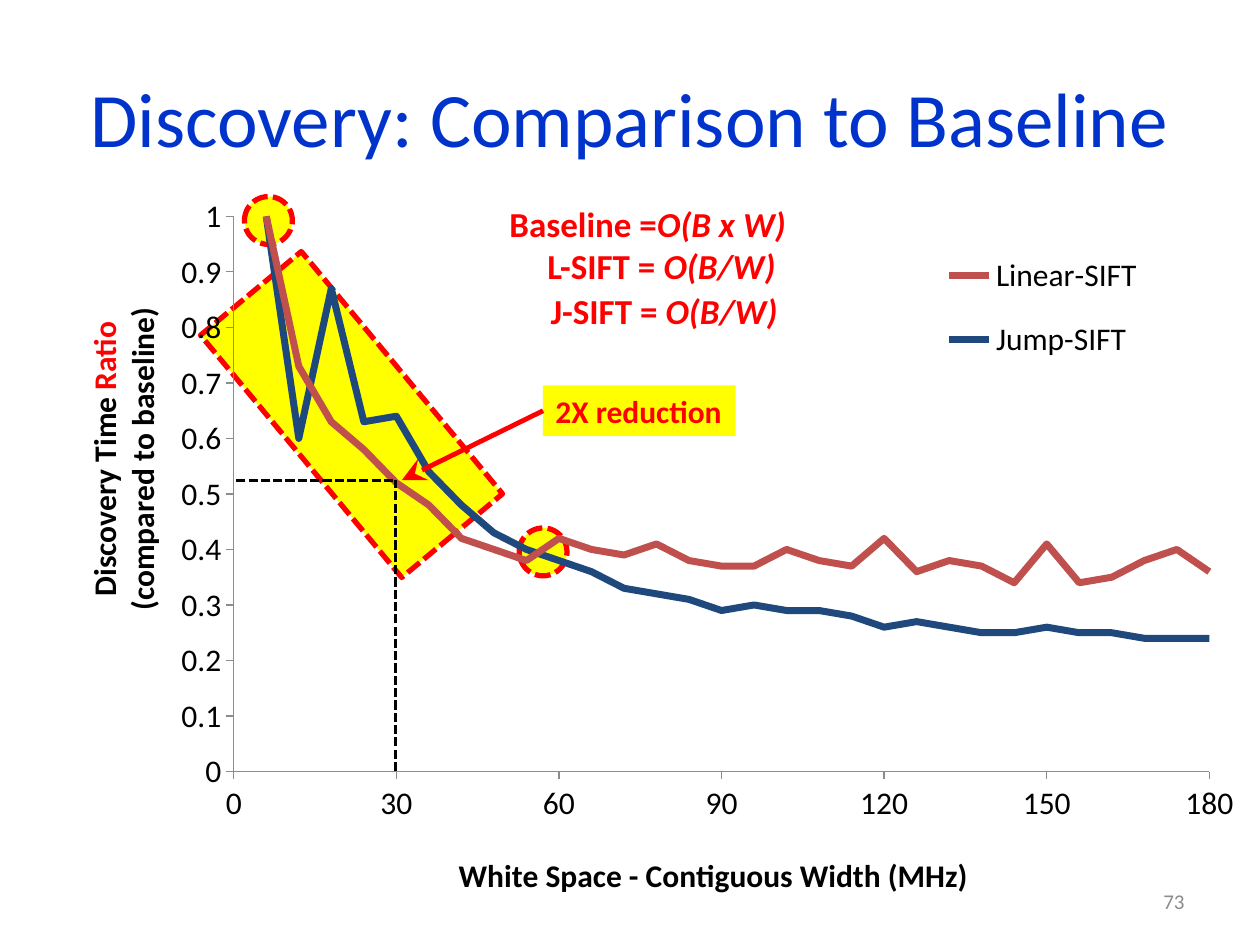
"""Build the slide comparing SIFT discovery times with the baseline."""
from lxml.etree import SubElement
from pptx import Presentation
from pptx.chart.data import XyChartData
from pptx.dml.color import RGBColor
from pptx.enum.chart import XL_CHART_TYPE as Chart, XL_LEGEND_POSITION as LegendPos
from pptx.enum.chart import XL_MARKER_STYLE as Marker, XL_TICK_MARK as Tick
from pptx.enum.dml import MSO_LINE as Dash
from pptx.enum.shapes import MSO_CONNECTOR as Link, MSO_SHAPE as Shape
from pptx.enum.text import MSO_ANCHOR as Anchor, PP_ALIGN as Align
from pptx.oxml import parse_xml
from pptx.oxml.ns import nsdecls, qn
from pptx.util import Inches, Pt

BLUE = RGBColor(0x00, 0x33, 0xCC)
RED = RGBColor(0xFF, 0x00, 0x00)
YELLOW = RGBColor(0xFF, 0xFF, 0x00)
BLACK = RGBColor(0x00, 0x00, 0x00)
GRAY = RGBColor(0x8C, 0x8C, 0x8C)
BRICK = RGBColor(0xC0, 0x50, 0x4D)
NAVY = RGBColor(0x1F, 0x49, 0x7D)


def add_run(paragraph, text, color, **formats):
    run = paragraph.add_run()
    run.text = text
    run.font.color.rgb = color
    for key, value in ({"name": "Calibri"} | formats).items():
        setattr(run.font, key, value)


def set_layout(element, index, **fractions):
    for old in element.findall(qn("c:layout")):
        element.remove(old)
    layout = parse_xml(f"<c:layout {nsdecls('c')}><c:manualLayout/></c:layout>")
    for tag, value in fractions.items():
        SubElement(layout[0], qn(f"c:{tag}")).set("val", str(value))
    element.insert(index, layout)


deck = Presentation()
deck.slide_width, deck.slide_height = Inches(10), Inches(7.5)
shapes = deck.slides.add_slide(deck.slide_layouts[6]).shapes

for preset, left, top, width, height, angle in (
    (Shape.RECTANGLE, 2.27, 2.04, 1.04, 2.5, 320.3),
    (Shape.OVAL, 1.94, 1.56, 0.38, 0.38, 0),
    (Shape.OVAL, 4.12, 4.19, 0.38, 0.38, 0),
):
    highlight = shapes.add_shape(
        preset, Inches(left), Inches(top), Inches(width), Inches(height))
    highlight.rotation = angle
    highlight.shadow.inherit = False
    highlight.fill.solid()
    highlight.fill.fore_color.rgb = YELLOW
    highlight.line.color.rgb = RED
    highlight.line.width = Pt(3)
    highlight.line.dash_style = Dash.SQUARE_DOT

ratios = {
    "Linear-SIFT": (BRICK, [
        1, 0.73, 0.63, 0.58, 0.52, 0.48, 0.42, 0.4, 0.38, 0.42,
        0.4, 0.39, 0.41, 0.38, 0.37, 0.37, 0.4, 0.38, 0.37, 0.42,
        0.36, 0.38, 0.37, 0.34, 0.41, 0.34, 0.35, 0.38, 0.4, 0.36]),
    "Jump-SIFT": (NAVY, [
        1, 0.6, 0.87, 0.63, 0.64, 0.54, 0.48, 0.43, 0.4, 0.38,
        0.36, 0.33, 0.32, 0.31, 0.29, 0.3, 0.29, 0.29, 0.28, 0.26,
        0.27, 0.26, 0.25, 0.25, 0.26, 0.25, 0.25, 0.24, 0.24, 0.24]),
}
ratio_data = XyChartData()
for name, (_, values) in ratios.items():
    series_data = ratio_data.add_series(name)
    for step, ratio in enumerate(values, start=1):
        series_data.add_data_point(6 * step, ratio)

chart = shapes.add_chart(
    Chart.XY_SCATTER_LINES_NO_MARKERS, Inches(0.44), Inches(1.42),
    Inches(9.56), Inches(5.83), ratio_data).chart
chart.has_title = False
chart.font.name, chart.font.size, chart.font.color.rgb = "Calibri", Pt(18), BLACK
chart.plots[0].vary_by_categories = False
for series, (color, _) in zip(chart.plots[0].series, ratios.values()):
    series.smooth = False
    series.marker.style = Marker.NONE
    series.format.line.color.rgb = color
    series.format.line.width = Pt(4)

width_axis, ratio_axis = chart.category_axis, chart.value_axis
for axis, top_value, unit, number_format, title_lines, spot in (
    (width_axis, 180, 30, "0", [[("White Space - Contiguous Width (MHz)", BLACK)]],
     {"x": 0.33, "y": 0.91}),
    (ratio_axis, 1, 0.1, "General",
     [[("Discovery Time ", BLACK), ("Ratio", RED)],
      [("(compared to baseline)", BLACK)]],
     {"x": 0.02, "y": 0.17}),
):
    for key, value in {
        "minimum_scale": 0, "maximum_scale": top_value, "major_unit": unit,
        "has_major_gridlines": False, "has_minor_gridlines": False,
        "major_tick_mark": Tick.OUTSIDE, "minor_tick_mark": Tick.NONE,
    }.items():
        setattr(axis, key, value)
    axis.tick_labels.number_format = number_format
    axis.tick_labels.number_format_is_linked = False
    axis.format.line.color.rgb = GRAY
    title_frame = axis.axis_title.text_frame
    for number, pieces in enumerate(title_lines):
        line = title_frame.add_paragraph() if number else title_frame.paragraphs[0]
        line.alignment = Align.CENTER
        for text, color in pieces:
            add_run(line, text, color, size=Pt(18), bold=True)
    set_layout(axis.axis_title._element, 1, xMode="edge", yMode="edge", **spot)
ratio_turn = ratio_axis.axis_title.text_frame._txBody.find(qn("a:bodyPr"))
ratio_turn.set("rot", "-5400000")
ratio_turn.set("vert", "horz")

chart.has_legend = True
chart.legend.position = LegendPos.RIGHT
chart.legend.include_in_layout = False
set_layout(chart.legend._element, 1, xMode="edge", yMode="edge",
           x=0.72, y=0.07, w=0.2, h=0.21)
chart_part = chart._chartSpace.find(qn("c:chart"))
plot_area = chart_part.find(qn("c:plotArea"))
set_layout(plot_area, 0, layoutTarget="inner", xMode="edge", yMode="edge",
           x=0.148, y=0.051, w=0.81, h=0.756)
clear = f"<c:spPr {nsdecls('c', 'a')}><a:noFill/><a:ln><a:noFill/></a:ln></c:spPr>"
plot_area.append(parse_xml(clear))
chart_part.addnext(parse_xml(clear))

big_o = {"size": Pt(20), "bold": True}
italic_o = big_o | {"italic": True}
for left, top, width, height, align, anchor, pieces in (
    (0.5, 0.3, 9, 1.25, Align.CENTER, Anchor.MIDDLE,
     [("Discovery: Comparison to Baseline", BLUE, {"size": Pt(44)})]),
    (7.17, 6.95, 2.33, 0.4, Align.RIGHT, Anchor.MIDDLE,
     [("73", GRAY, {"size": Pt(12)})]),
    (3.2, 1.56, 3.88, 0.44, Align.CENTER, Anchor.TOP,
     [("Baseline =", RED, big_o), ("Ο(B x W)", RED, italic_o)]),
    (3.31, 1.89, 3.88, 0.44, Align.CENTER, Anchor.TOP,
     [("L-SIFT = ", RED, big_o), ("Ο(B/W)", RED, italic_o)]),
    (3.33, 2.25, 3.88, 0.44, Align.CENTER, Anchor.TOP,
     [("J-SIFT = ", RED, big_o), ("Ο(B/W)", RED, italic_o)]),
    (4.31, 3.06, 1.53, 0.4, Align.LEFT, Anchor.TOP,
     [("2X reduction", RED, {"size": Pt(18), "bold": True})]),
):
    label = shapes.add_textbox(Inches(left), Inches(top), Inches(width), Inches(height))
    label.text_frame.word_wrap = True
    label.text_frame.vertical_anchor = anchor
    paragraph = label.text_frame.paragraphs[0]
    paragraph.alignment = align
    for text, color, formats in pieces:
        add_run(paragraph, text, color, **formats)

reduction = label
reduction.text_frame.word_wrap = False
reduction.fill.solid()
reduction.fill.fore_color.rgb = YELLOW

for x1, y1, x2, y2, color, weight, dash in (
    (3.14, 6.12, 3.14, 3.81, BLACK, 1.75, Dash.SQUARE_DOT),
    (3.12, 3.81, 1.86, 3.81, BLACK, 1.75, Dash.SQUARE_DOT),
    (4.31, 3.26, 3.19, 3.81, RED, 2.75, Dash.SOLID),
):
    guide = shapes.add_connector(
        Link.STRAIGHT, Inches(x1), Inches(y1), Inches(x2), Inches(y2))
    guide.line.color.rgb = color
    guide.line.width = Pt(weight)
    guide.line.dash_style = dash
    SubElement(guide._element.spPr, qn("a:effectLst"))

arrow = guide
arrow.begin_connect(reduction, 1)
arrowhead = SubElement(arrow.line._get_or_add_ln(), qn("a:tailEnd"))
for key, value in {"type": "stealth", "w": "lg", "len": "lg"}.items():
    arrowhead.set(key, value)

deck.save("out.pptx")
